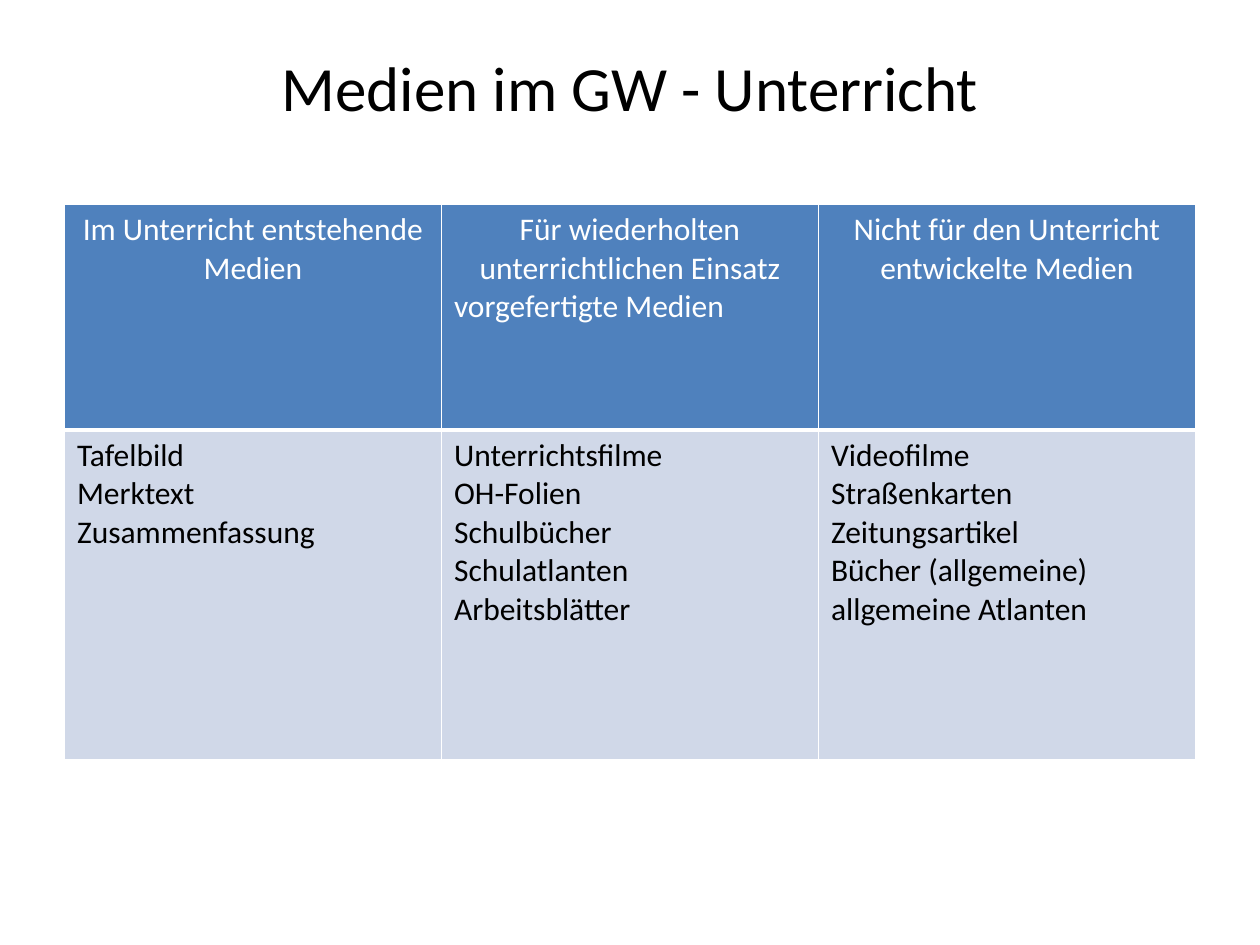
"""Build a slide that sorts classroom media into a three-column table."""
from lxml.etree import SubElement
from pptx import Presentation
from pptx.dml.color import RGBColor as RGB
from pptx.enum.text import MSO_ANCHOR as ANCHOR, PP_ALIGN as ALIGN
from pptx.oxml.ns import qn
from pptx.util import Cm, Pt

COLORS = {"text": "000000", "white": "FFFFFF", "header": "4F81BD", "body": "D0D8E8"}
COLUMNS = [
    (["Im Unterricht entstehende Medien"],
     ["Tafelbild", "Merktext", "Zusammenfassung"]),
    (["Für wiederholten unterrichtlichen Einsatz", "vorgefertigte Medien"],
     ["Unterrichtsfilme", "OH-Folien", "Schulbücher", "Schulatlanten", "Arbeitsblätter"]),
    (["Nicht für den Unterricht entwickelte Medien"],
     ["Videofilme", "Straßenkarten", "Zeitungsartikel", "Bücher (allgemeine)",
      "allgemeine Atlanten"]),
]
ROWS = [
    (Cm(4.55), "header", "white", {"L": 1, "R": 1, "T": 1, "B": 3}),
    (Cm(6.65), "body", "text", {"L": 1, "R": 1, "T": 3, "B": 1}),
]


def style_paragraph(p, size, color, align):
    p.font.name = "Calibri"
    p.font.size = Pt(size)
    p.font.bold = False
    p.font.color.rgb = RGB.from_string(COLORS[color])
    p.alignment = align


def add_borders(cell, widths):
    tc_pr = cell._tc.get_or_add_tcPr()
    for side, width in widths.items():
        ln = SubElement(tc_pr, qn(f"a:ln{side}"), w=str(Pt(width)))
        fill = SubElement(ln, qn("a:solidFill"))
        SubElement(fill, qn("a:srgbClr"), val=COLORS["white"])


prs = Presentation()
prs.slide_width, prs.slide_height = Cm(25.4), Cm(19.05)
s = prs.slides.add_slide(prs.slide_layouts[5])

title = s.shapes.title
title.left, title.top, title.width, title.height = Cm(1.27), Cm(0.76), Cm(22.86), Cm(1.96)
tf = title.text_frame
tf.text = "Medien im GW - Unterricht"
tf.vertical_anchor = ANCHOR.MIDDLE
style_paragraph(tf.paragraphs[0], 36, "text", ALIGN.CENTER)

table = s.shapes.add_table(
    len(ROWS), len(COLUMNS), Cm(1.3), Cm(4.12), Cm(22.8), Cm(11.2)).table
for column in table.columns:
    column.width = Cm(7.6)

for row, (height, fill, color, widths) in enumerate(ROWS):
    table.rows[row].height = height
    for col, texts in enumerate(COLUMNS):
        cell = table.cell(row, col)
        add_borders(cell, widths)
        cell.fill.solid()
        cell.fill.fore_color.rgb = RGB.from_string(COLORS[fill])
        cell.text = "\n".join(texts[row])
        for i, p in enumerate(cell.text_frame.paragraphs):
            centered = row == 0 and i == 0
            style_paragraph(p, 18, color, ALIGN.CENTER if centered else ALIGN.LEFT)

prs.save("out.pptx")
